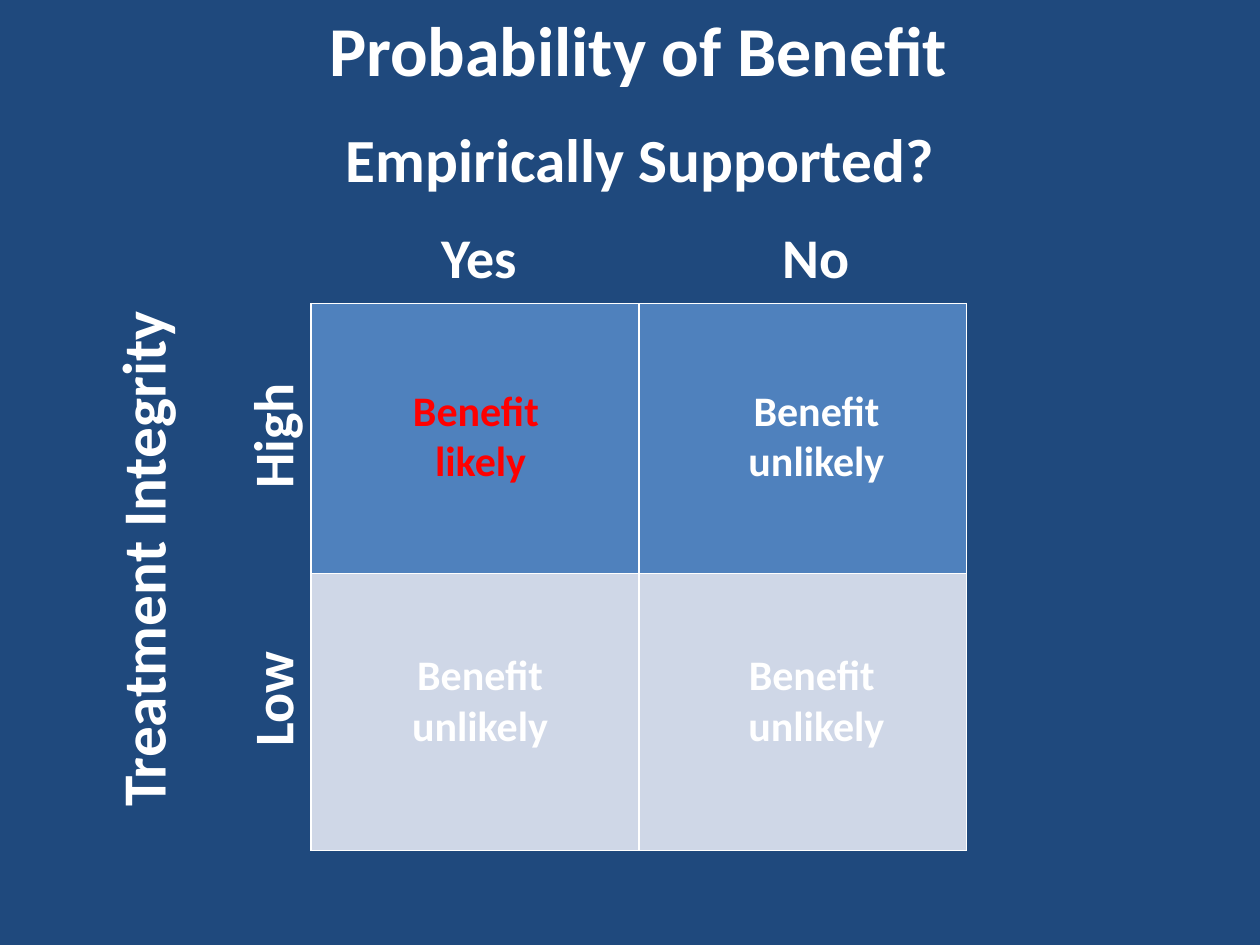
from lxml import etree
from pptx import Presentation
from pptx.dml.color import RGBColor
from pptx.enum.text import MSO_ANCHOR, MSO_AUTO_SIZE, PP_ALIGN
from pptx.oxml.ns import qn
from pptx.util import Inches, Pt

CENTER = PP_ALIGN.CENTER
TOP = MSO_ANCHOR.TOP
NO_FIT = MSO_AUTO_SIZE.NONE
TITLE_ONLY = 5
FONT = "Calibri"
COLORS = {
    "background": "1F497D",
    "high": "4F81BD",
    "low": "CFD7E7",
    "text": "FFFFFF",
    "likely": "FF0000",
}
HEADINGS = [
    ("Empirically Supported?", (2.62, 0.91, 4.92, 0.69), 35, 0),
    ("Yes", (3.38, 1.72, 0.85, 0.64), 32, 0),
    ("No", (6.11, 1.72, 0.74, 0.64), 32, 0),
    ("Treatment Integrity", (-0.98, 4.09, 4.21, 0.69), 35, 270),
    ("High", (1.63, 3.14, 1.05, 0.64), 32, 270),
    ("Low", (1.67, 5.23, 0.97, 0.64), 32, 270),
]
OUTCOMES = [
    ("Benefit \nlikely", (2.7, 3, 2.23, 0.91), "likely"),
    ("Benefit unlikely", (5.59, 3, 1.78, 0.91), "text"),
    ("Benefit unlikely", (2.92, 5.1, 1.78, 0.91), "text"),
    ("Benefit \nunlikely", (5.83, 5.1, 1.3, 0.91), "text"),
]


def rgb(name):
    """Return the named colour."""
    return RGBColor.from_string(COLORS[name])


def write_text(box, text, size, color="text", wrap=False):
    """Fill a box with bold centred text."""
    frame = box.text_frame
    frame.text = text
    frame.word_wrap = wrap
    frame.auto_size = NO_FIT
    frame.vertical_anchor = TOP
    for paragraph in frame.paragraphs:
        paragraph.alignment = CENTER
        for span in paragraph.runs:
            span.font.name = FONT
            span.font.size = Pt(size)
            span.font.bold = True
            span.font.color.rgb = rgb(color)


def add_label(page, text, place, size, rotation=0, color="text", wrap=False):
    """Add a text box, turned if needed."""
    box = page.shapes.add_textbox(*map(Inches, place))
    box.rotation = rotation
    write_text(box, text, size, color, wrap)


def set_title(page, text):
    """Place and format the slide title."""
    title = page.shapes.title
    title.left, title.top, title.width, title.height = map(Inches, (2.48, 0, 5.17, 0.77))
    write_text(title, text, 40)


def style_cell(cell, color):
    """Give a cell its borders and fill."""
    properties = cell._tc.get_or_add_tcPr()
    for side in ("lnL", "lnR", "lnT", "lnB"):
        line = etree.SubElement(properties, qn(f"a:{side}"), w=str(Pt(1)))
        fill = etree.SubElement(line, qn("a:solidFill"))
        etree.SubElement(fill, qn("a:srgbClr"), val=COLORS["text"])
    cell.fill.solid()
    cell.fill.fore_color.rgb = rgb(color)


def add_matrix(page):
    """Add the two by two table."""
    heights = (2.14, 2.2)
    frame = page.shapes.add_table(2, 2, *map(Inches, (2.47, 2.41, 5.2, sum(heights))))
    table = frame.table
    for row, height, color in zip(table.rows, heights, ("high", "low")):
        row.height = Inches(height)
        for cell in row.cells:
            style_cell(cell, color)


def main():
    """Build and save the slide."""
    deck = Presentation()
    deck.slide_width, deck.slide_height = Inches(10), Inches(7.5)
    page = deck.slides.add_slide(deck.slide_layouts[TITLE_ONLY])
    page.background.fill.solid()
    page.background.fill.fore_color.rgb = rgb("background")
    set_title(page, "Probability of Benefit")
    add_matrix(page)
    for text, place, size, rotation in HEADINGS:
        add_label(page, text, place, size, rotation)
    for text, place, color in OUTCOMES:
        add_label(page, text, place, 24, color=color, wrap=True)
    deck.save("out.pptx")


if __name__ == "__main__":
    main()
